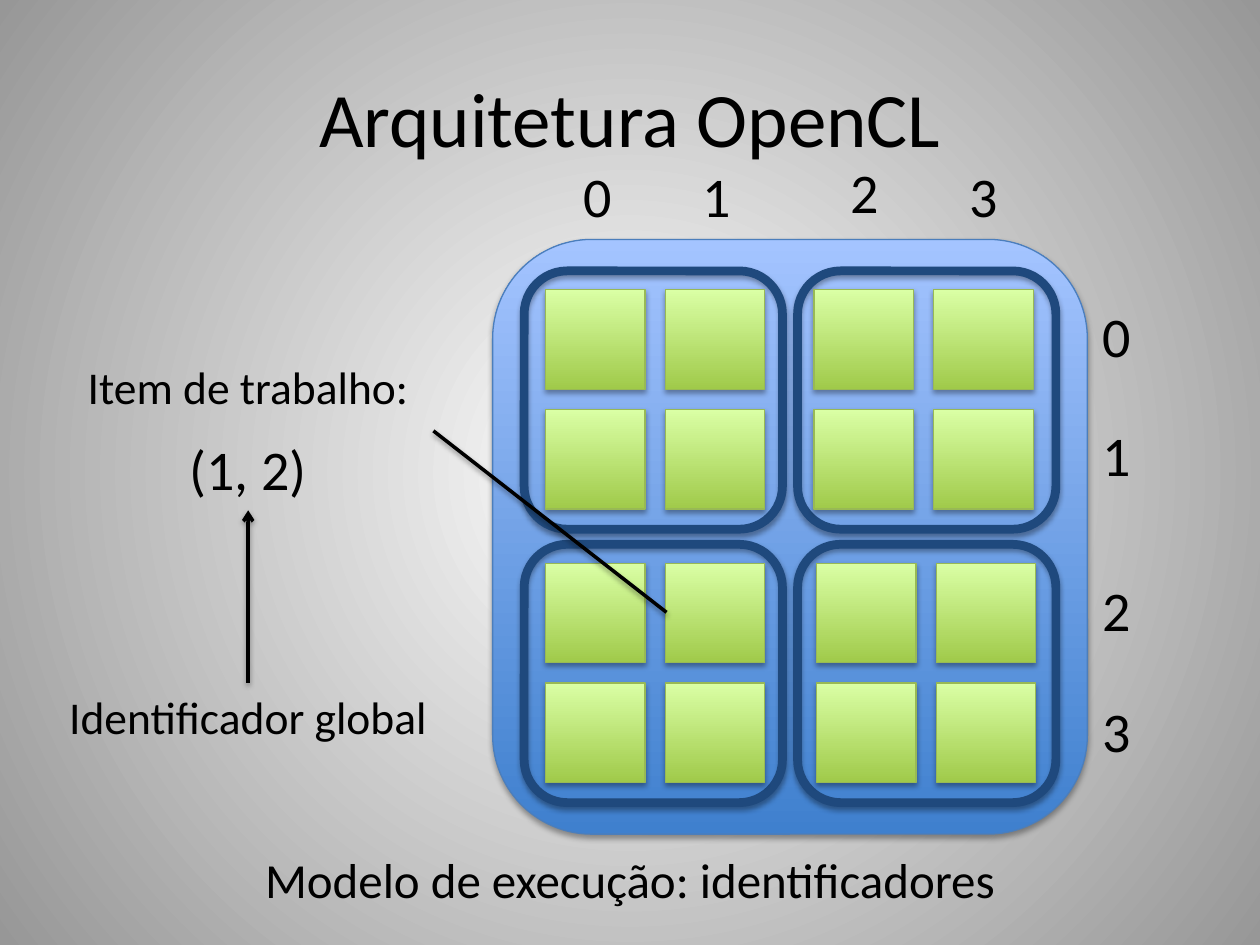
from dataclasses import dataclass
from itertools import product

from lxml.etree import SubElement
from pptx import Presentation
from pptx.dml.color import RGBColor
from pptx.enum.shapes import MSO_CONNECTOR, MSO_SHAPE
from pptx.enum.text import MSO_ANCHOR, PP_ALIGN
from pptx.oxml.ns import qn
from pptx.util import Inches, Pt


@dataclass(frozen=True)
class Theme:
    font: str = "Calibri"
    ink: str = "000000"
    background: tuple = ("FFFFFF", "979797")
    device: tuple = ("3F80CE", "A4C4FF")
    device_line: str = "4B7EBC"
    group_line: str = "1F497D"
    item: tuple = ("A0CA4A", "DAFFA5")
    item_line: str = "98B955"
    title: int = 44
    index: int = 32
    caption: int = 28
    label: int = 26


THEME = Theme()
GROUP_SIZE = 2.05
ITEM_SIZE = 0.79
ITEM_PITCH = 0.95


def set_gradient(fill, colors):
    fill.gradient()
    fill.gradient_angle = 90
    for stop, color in zip(fill.gradient_stops, colors):
        stop.color.rgb = RGBColor.from_string(color)


def set_background(slide):
    """Radial gradient, spreading from the centre of the slide."""
    set_gradient(slide.background.fill, THEME.background)
    gradient = slide.element.find(".//" + qn("a:gradFill"))
    gradient.remove(gradient.find(qn("a:lin")))
    radial = SubElement(gradient, qn("a:path"), path="circle")
    SubElement(radial, qn("a:fillToRect"), l="50000", t="50000", r="50000", b="50000")


def set_line(line, color, width):
    line.color.rgb = RGBColor.from_string(color)
    line.width = Pt(width)


def add_shadow(shape, opacity, distance):
    """Soft shadow straight below; call once the line is set."""
    effects = SubElement(shape.element.spPr, qn("a:effectLst"))
    shadow = SubElement(effects, qn("a:outerShdw"), blurRad=str(Pt(3.1)),
                        dist=str(Pt(distance)), dir="5400000", rotWithShape="0")
    color = SubElement(shadow, qn("a:srgbClr"), val="000000")
    SubElement(color, qn("a:alpha"), val=str(opacity * 1000))


def add_square(slide, kind, left, top, size, line_color, line_width, colors=None):
    shape = slide.shapes.add_shape(kind, Inches(left), Inches(top), Inches(size), Inches(size))
    if colors:
        set_gradient(shape.fill, colors)
    else:
        shape.fill.background()
    set_line(shape.line, line_color, line_width)
    add_shadow(shape, 35, 1.8)


def add_text(slide, left, top, width, height, *lines, anchor=MSO_ANCHOR.TOP, gap=0):
    """Centred text; each line is a (text, size) pair."""
    box = slide.shapes.add_textbox(Inches(left), Inches(top), Inches(width), Inches(height))
    frame = box.text_frame
    frame.word_wrap = True
    frame.vertical_anchor = anchor
    for number, (text, size) in enumerate(lines):
        paragraph = frame.add_paragraph() if number else frame.paragraphs[0]
        paragraph.text = text
        paragraph.alignment = PP_ALIGN.CENTER
        paragraph.space_before = Pt(gap if number else 0)
        paragraph.font.name = THEME.font
        paragraph.font.size = Pt(size)
        paragraph.font.color.rgb = RGBColor.from_string(THEME.ink)


def add_line(slide, start, end, arrow=False):
    points = [Inches(value) for value in (*start, *end)]
    connector = slide.shapes.add_connector(MSO_CONNECTOR.STRAIGHT, *points)
    set_line(connector.line, THEME.ink, 2)
    if arrow:
        SubElement(connector.element.spPr.find(qn("a:ln")), qn("a:tailEnd"), type="arrow")
    add_shadow(connector, 38, 1.6)


def add_work_group(slide, left, top, items_left):
    add_square(slide, MSO_SHAPE.ROUNDED_RECTANGLE, left, top, GROUP_SIZE, THEME.group_line, 5)
    for row, column in product(range(2), repeat=2):
        add_square(slide, MSO_SHAPE.RECTANGLE, items_left + column * ITEM_PITCH,
                   top + 0.15 + row * ITEM_PITCH, ITEM_SIZE, THEME.item_line, 0.75, THEME.item)


def add_index(slide, left, top, number):
    add_text(slide, left, top, 0.45, 0.64, (str(number), THEME.index))


def main():
    presentation = Presentation()
    presentation.slide_width, presentation.slide_height = Inches(10), Inches(7.5)
    slide = presentation.slides.add_slide(presentation.slide_layouts[6])
    set_background(slide)

    # Device with four work groups of four items
    add_square(slide, MSO_SHAPE.ROUNDED_RECTANGLE, 3.91, 1.9, 4.72,
               THEME.device_line, 0.75, THEME.device)
    for left, top, items_left in ((4.16, 2.15, 4.33), (6.33, 2.15, 6.46),
                                  (4.16, 4.32, 4.33), (6.33, 4.32, 6.48)):
        add_work_group(slide, left, top, items_left)

    # Title and caption
    add_text(slide, 0.5, 0.3, 9, 1.25, ("Arquitetura OpenCL", THEME.title),
             anchor=MSO_ANCHOR.MIDDLE)
    add_text(slide, 0.5, 6.69, 9, 0.57, ("Modelo de execução: identificadores", THEME.caption))

    # Column and row indices
    for number, (left, top) in enumerate(((4.52, 1.23), (5.46, 1.23), (6.64, 1.2), (7.58, 1.23))):
        add_index(slide, left, top, number)
    for number, top in enumerate((2.34, 3.29, 4.52, 5.48)):
        add_index(slide, 8.64, top, number)

    # Work item and its global identifier
    add_text(slide, 0.5, 2.8, 2.94, 1.25, ("Item de trabalho:", THEME.label),
             ("(1, 2)", THEME.index), gap=12)
    add_line(slide, (3.44, 3.42), (5.29, 4.86))
    add_text(slide, 0.39, 5.42, 3.16, 0.54, ("Identificador global", THEME.label))
    add_line(slide, (1.97, 5.42), (1.97, 4.05), arrow=True)

    presentation.save("out.pptx")


if __name__ == "__main__":
    main()
